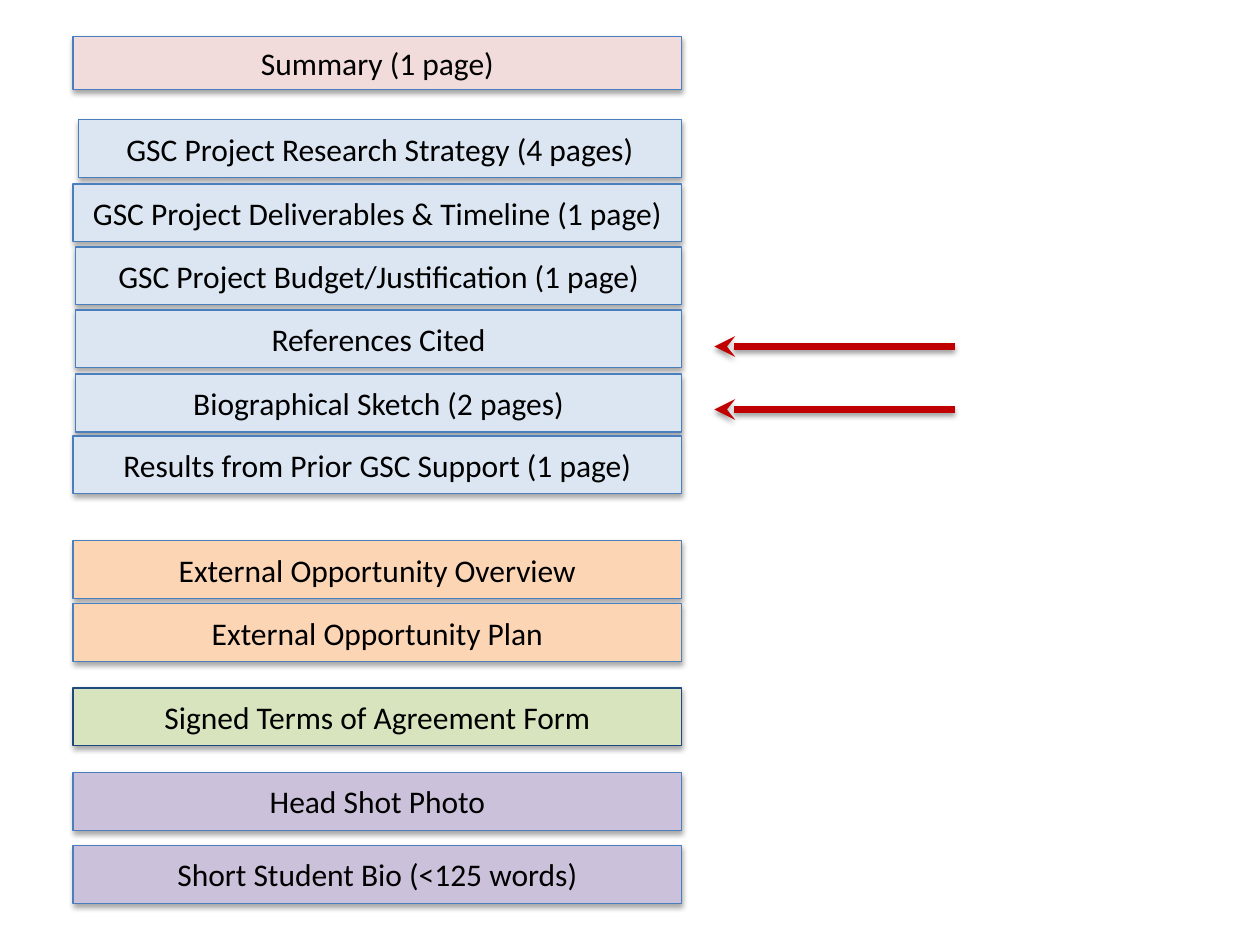
from lxml import etree
from pptx import Presentation
from pptx.dml.color import RGBColor
from pptx.enum.shapes import MSO_CONNECTOR, MSO_SHAPE
from pptx.enum.text import MSO_ANCHOR, PP_ALIGN
from pptx.oxml.ns import qn
from pptx.util import Pt

RECTANGLE = MSO_SHAPE.RECTANGLE
STRAIGHT = MSO_CONNECTOR.STRAIGHT
CENTER = PP_ALIGN.CENTER
MIDDLE = MSO_ANCHOR.MIDDLE

COLORS = {
    "summary": "F2DCDB",
    "project": "DCE6F2",
    "external": "FCD5B5",
    "terms": "D7E4BD",
    "profile": "CCC1DA",
    "outline": "4B7EBC",
    "terms_outline": "1F497D",
    "arrow": "C00000",
    "text": "000000",
    "shadow": "000000",
}
LABEL_FONT = {"name": "Calibri", "size": Pt(18)}

LEFT, WIDTH, BAR_HEIGHT = 41.8, 347.8, 33.1

# Section: fill, outline, top, bar height, bars as (label, offset from top, indent)
SECTIONS = [
    ("summary", "outline", 20.9, 30.2, [("Summary (1 page)", 0, 0)]),
    ("project", "outline", 68.4, BAR_HEIGHT, [
        ("GSC Project Research Strategy (4 pages)", 0, 2.9),
        ("GSC Project Deliverables & Timeline (1 page)", 36.7, 0),
        ("GSC Project Budget/Justification (1 page)", 72.7, 1.4),
        ("References Cited", 108.7, 1.4),
        ("Biographical Sketch (2 pages)", 145.4, 1.4),
        ("Results from Prior GSC Support (1 page)", 180.7, 0),
    ]),
    ("external", "outline", 308.9, BAR_HEIGHT, [
        ("External Opportunity Overview", 0, 0),
        ("External Opportunity Plan", 36, 0),
    ]),
    ("terms", "terms_outline", 393.1, BAR_HEIGHT, [
        ("Signed Terms of Agreement Form", 0, 0),
    ]),
    ("profile", "outline", 441.4, BAR_HEIGHT, [
        ("Head Shot Photo", 0, 0),
        ("Short Student Bio (<125 words)", 41.7, 0),
    ]),
]


def color(key):
    return RGBColor.from_string(COLORS[key])


def add_shadow(part, distance, opacity):
    """Drop a soft shadow straight down; the line must be set already."""
    effects = etree.SubElement(part._element.spPr, qn("a:effectLst"))
    shadow = etree.SubElement(
        effects, qn("a:outerShdw"), blurRad=str(Pt(3.1)),
        dist=str(Pt(distance)), dir="5400000", rotWithShape="0")
    tint = etree.SubElement(shadow, qn("a:srgbClr"), val=COLORS["shadow"])
    etree.SubElement(tint, qn("a:alpha"), val=str(opacity * 1000))


def add_bar(slide, box, label, fill, outline):
    bar = slide.shapes.add_shape(RECTANGLE, *map(Pt, box))
    bar.fill.solid()
    bar.fill.fore_color.rgb = color(fill)
    bar.line.color.rgb = color(outline)
    bar.line.width = Pt(0.75)
    add_shadow(bar, 1.8, 35)

    frame = bar.text_frame
    frame.word_wrap = True
    frame.vertical_anchor = MIDDLE
    paragraph = frame.paragraphs[0]
    paragraph.alignment = CENTER
    run = paragraph.add_run()
    run.text = label
    for attribute, value in LABEL_FONT.items():
        setattr(run.font, attribute, value)
    run.font.color.rgb = color("text")


def add_section(slide, box, fill, outline, bars):
    left, top, width, height = box
    for label, offset, indent in bars:
        bar_box = (left + indent, top + offset, width - indent, height)
        add_bar(slide, bar_box, label, fill, outline)


def add_arrows(slide, box, count):
    """Left-pointing arrows spread evenly from the top to the bottom of the box."""
    left, top, width, height = box
    for index in range(count):
        y = top + index * height / (count - 1)
        arrow = slide.shapes.add_connector(
            STRAIGHT, Pt(left), Pt(y), Pt(left + width), Pt(y))
        arrow.line.color.rgb = color("arrow")
        arrow.line.width = Pt(4)
        etree.SubElement(arrow.line._get_or_add_ln(), qn("a:headEnd"), type="stealth")
        add_shadow(arrow, 1.6, 38)


def main():
    deck = Presentation()
    deck.slide_width, deck.slide_height = Pt(720), Pt(540)
    slide = deck.slides.add_slide(deck.slide_layouts[6])

    # Application parts, top to bottom
    for fill, outline, top, height, bars in SECTIONS:
        add_section(slide, (LEFT, top, WIDTH, height), fill, outline, bars)

    # Pointers to the references and the biographical sketch
    add_arrows(slide, (408.2, 198, 137.5, 36), 2)

    deck.save("out.pptx")


if __name__ == "__main__":
    main()
